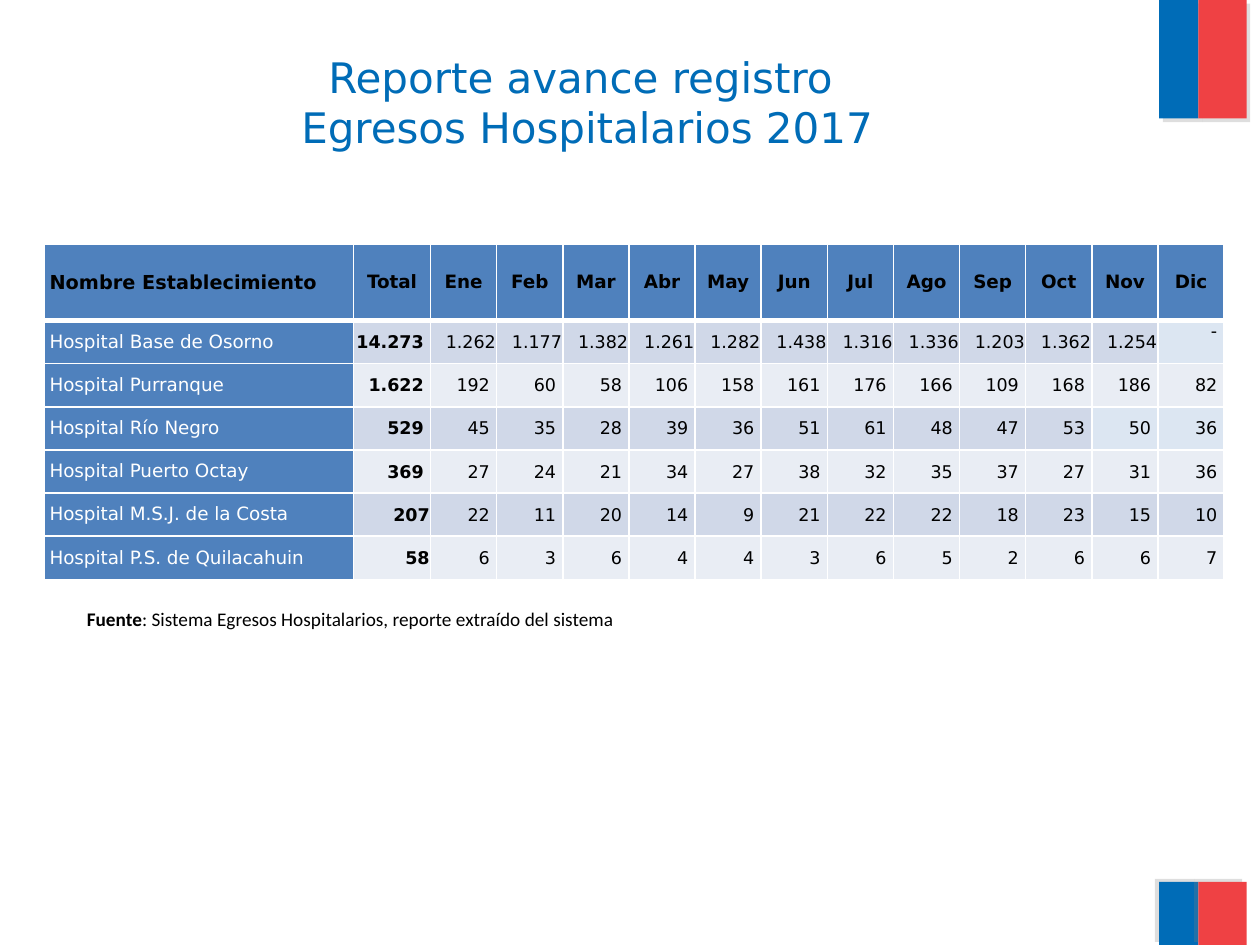
from dataclasses import dataclass

import lxml.etree
import pptx
import pptx.dml.color
import pptx.enum.shapes
import pptx.enum.text
import pptx.oxml.ns
import pptx.util

Cm = pptx.util.Cm
Pt = pptx.util.Pt
ALIGN = pptx.enum.text.PP_ALIGN
ANCHOR = pptx.enum.text.MSO_ANCHOR


@dataclass(frozen=True)
class Theme:
    blue: str = "006CB7"
    red: str = "EF4144"
    shadow: str = "808080"
    header: str = "4F81BD"
    odd: str = "D0D8E8"
    even: str = "E9EDF4"
    light: str = "DCE6F2"
    white: str = "FFFFFF"
    black: str = "000000"
    font: str = "DejaVu Sans"
    source_font: str = "Calibri"
    title_size: float = 24
    large: float = 11
    medium: float = 10.5
    small: float = 10


THEME = Theme()

MONTHS = "Ene Feb Mar Abr May Jun Jul Ago Sep Oct Nov Dic".split()
HEADINGS = ["Nombre Establecimiento", "Total"] + MONTHS
HOSPITALS = [
    ("Hospital Base de Osorno", "14.273 1.262 1.177 1.382 1.261 1.282 1.438 1.316 1.336 1.203 1.362 1.254 -"),
    ("Hospital Purranque", "1.622 192 60 58 106 158 161 176 166 109 168 186 82"),
    ("Hospital Río Negro", "529 45 35 28 39 36 51 61 48 47 53 50 36"),
    ("Hospital Puerto Octay", "369 27 24 21 34 27 38 32 35 37 27 31 36"),
    ("Hospital M.S.J. de la Costa", "207 22 11 20 14 9 21 22 22 18 23 15 10"),
    ("Hospital P.S. de Quilacahuin", "58 6 3 6 4 4 3 6 5 2 6 6 7"),
]
LIGHT_CELLS = {(1, 13), (3, 12), (3, 13)}
FLUSH_TOTAL_ROWS = {5, 6}


def rgb(color):
    return pptx.dml.color.RGBColor.from_string(color)


def set_attrs(obj, values):
    for name, value in values.items():
        setattr(obj, name, value)


def sub(parent, tag, **attrs):
    return lxml.etree.SubElement(parent, pptx.oxml.ns.qn(tag), attrs)


def add_run(p, text, size, color, bold=False, font=THEME.font):
    r = p.add_run()
    r.text = text
    set_attrs(r.font, {"name": font, "size": Pt(size), "bold": bold})
    r.font.color.rgb = rgb(color)


def add_block(s, box, color, shadow_angle):
    sp = s.shapes.add_shape(pptx.enum.shapes.MSO_SHAPE.RECTANGLE, *map(Cm, box))
    sp.fill.solid()
    sp.fill.fore_color.rgb = rgb(color)
    sp.line.fill.background()
    sp.shadow.inherit = False
    effects = sp._element.spPr.find(pptx.oxml.ns.qn("a:effectLst"))
    shadow = sub(effects, "a:outerShdw", blurRad="0", dist=str(Pt(3)),
                 dir=str(shadow_angle * 60000), algn="ctr", rotWithShape="0")
    tint = sub(shadow, "a:srgbClr", val=THEME.shadow)
    sub(tint, "a:alpha", val="25000")


def add_flag(s, top, height, shadow_angle):
    for left, width, color in [(23.37, 0.79, THEME.blue), (24.16, 0.97, THEME.red)]:
        add_block(s, (left, top, width, height), color, shadow_angle)


def add_title(s):
    tf = s.shapes.add_textbox(Cm(0.5), Cm(0.91), Cm(22.68), Cm(3.18)).text_frame
    set_attrs(tf, {"word_wrap": True, "vertical_anchor": ANCHOR.TOP})
    p = tf.paragraphs[0]
    p.alignment = ALIGN.CENTER
    add_run(p, "Reporte avance registro ", THEME.title_size, THEME.blue)
    p.add_line_break()
    add_run(p, "Egresos Hospitalarios 2017", THEME.title_size, THEME.blue)


def add_source_note(s):
    tf = s.shapes.add_textbox(Cm(1.5), Cm(12.12), Cm(11.4), Cm(0.74)).text_frame
    set_attrs(tf, {"word_wrap": False,
                   "auto_size": pptx.enum.text.MSO_AUTO_SIZE.SHAPE_TO_FIT_TEXT})
    p = tf.paragraphs[0]
    add_run(p, "Fuente", THEME.large, THEME.black, True, THEME.source_font)
    add_run(p, ": Sistema Egresos Hospitalarios, reporte extraído del sistema",
            THEME.large, THEME.black, False, THEME.source_font)


def set_borders(cell, bottom):
    tcPr = cell._tc.get_or_add_tcPr()
    for side, width in {"L": 1, "R": 1, "T": 1, "B": bottom}.items():
        ln = sub(tcPr, f"a:ln{side}", w=str(Pt(width)))
        sub(sub(ln, "a:solidFill"), "a:srgbClr", val=THEME.white)


def fill_cell(cell, text, fill, size, color, bold, align, margins,
              anchor=ANCHOR.MIDDLE, bottom=1):
    set_borders(cell, bottom)
    cell.fill.solid()
    cell.fill.fore_color.rgb = rgb(fill)
    left, top, right = map(Cm, margins)
    set_attrs(cell, {"margin_left": left, "margin_top": top, "margin_right": right,
                     "margin_bottom": 0, "vertical_anchor": anchor})
    p = cell.text_frame.paragraphs[0]
    p.alignment = align
    add_run(p, text, size, color, bold)


def fill_header(table):
    for col, text in enumerate(HEADINGS):
        size, align = (THEME.medium, ALIGN.CENTER) if col else (THEME.large, ALIGN.LEFT)
        fill_cell(table.cell(0, col), text, THEME.header, size, THEME.black, True,
                  align, (0.1, 0, 0.1), bottom=3)


def fill_hospital(table, row, name, values):
    fill_cell(table.cell(row, 0), name, THEME.header, THEME.medium, THEME.white, False,
              ALIGN.LEFT, (0.1, 0, 0.1))
    band = THEME.odd if row % 2 else THEME.even
    for col, value in enumerate(values.split(), 1):
        is_total = col == 1
        flush = row in FLUSH_TOTAL_ROWS if is_total else "." in value
        fill_cell(table.cell(row, col), value,
                  THEME.light if (row, col) in LIGHT_CELLS else band,
                  THEME.small, THEME.black, is_total, ALIGN.RIGHT,
                  (0.02, 0.02, 0.02 if flush else 0.14),
                  ANCHOR.TOP if value == "-" else ANCHOR.MIDDLE)


def add_discharges(s):
    table = s.shapes.add_table(len(HOSPITALS) + 1, len(HEADINGS),
                               Cm(0.9), Cm(4.93), Cm(23.78), Cm(6.75)).table
    set_attrs(table, {"first_row": False, "horz_banding": False})
    widths = [Cm(6.23), Cm(1.55)] + [Cm(16) // len(MONTHS)] * len(MONTHS)
    for column, width in zip(table.columns, widths):
        column.width = width
    for row, height in zip(table.rows, [1.53] + [0.87] * len(HOSPITALS)):
        row.height = Cm(height)
    fill_header(table)
    for row, (name, values) in enumerate(HOSPITALS, 1):
        fill_hospital(table, row, name, values)


def main():
    prs = pptx.Presentation()
    set_attrs(prs, {"slide_width": Cm(25.4), "slide_height": Cm(19.05)})
    s = prs.slides.add_slide(prs.slide_layouts[6])
    add_flag(s, 0, 2.39, 45)
    add_flag(s, 17.78, 1.27, 215)
    add_title(s)
    add_discharges(s)
    add_source_note(s)
    prs.save("out.pptx")


if __name__ == "__main__":
    main()
